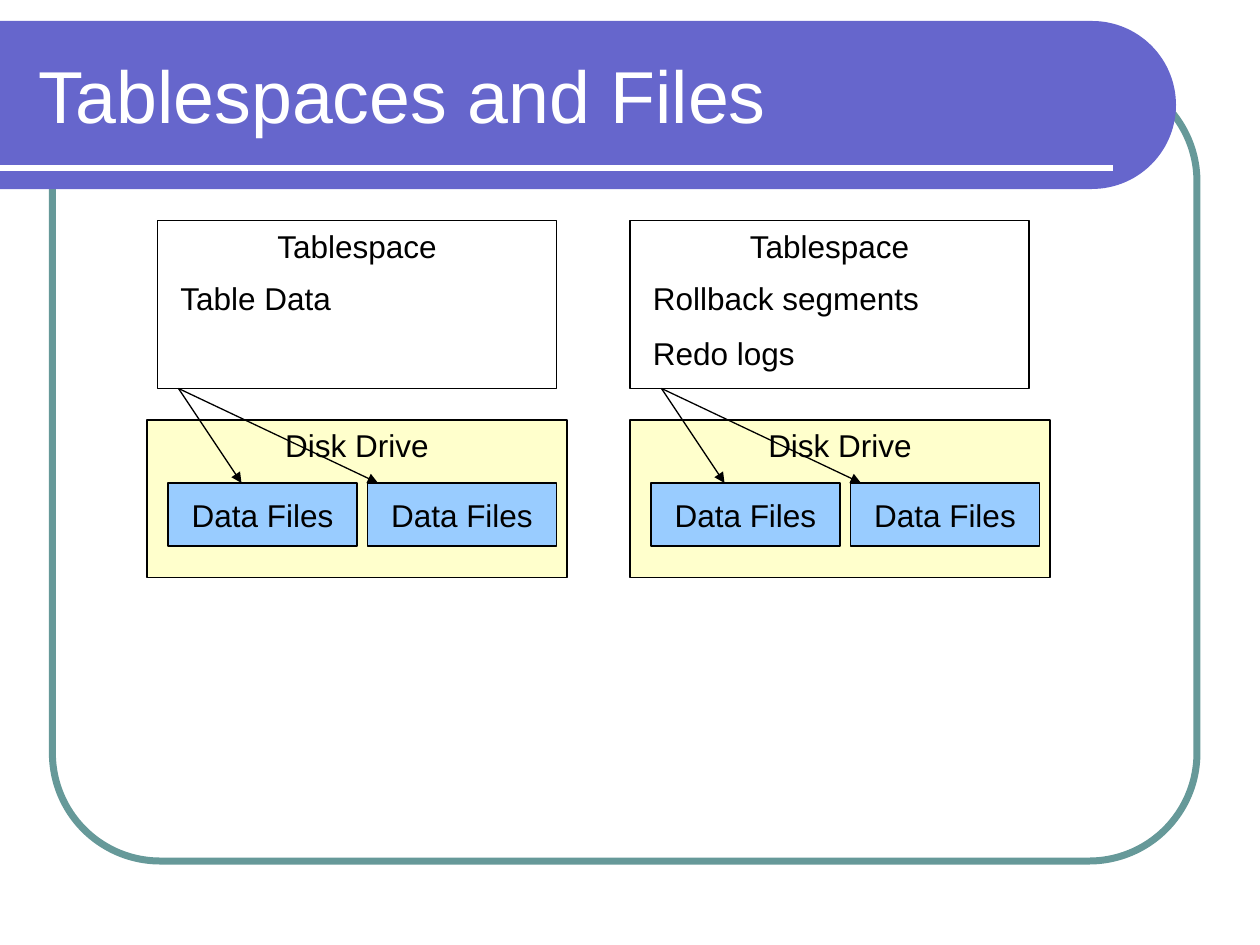
from dataclasses import dataclass
from math import cos, pi, sin

from lxml.etree import SubElement
from pptx import Presentation
from pptx.dml.color import RGBColor as RGB
from pptx.enum.shapes import MSO_CONNECTOR as Connector, MSO_SHAPE as Shape
from pptx.enum.text import MSO_ANCHOR as Anchor, MSO_AUTO_SIZE as AutoSize, PP_ALIGN as Align
from pptx.oxml.ns import qn
from pptx.util import Pt


@dataclass(frozen=True)
class Theme:
    font: str = "Arial"
    title_size: int = 42
    body_size: int = 18
    white: RGB = RGB(0xFF, 0xFF, 0xFF)
    ink: RGB = RGB(0, 0, 0)
    band: RGB = RGB(0x66, 0x66, 0xCC)
    frame: RGB = RGB(0x66, 0x99, 0x99)
    disk: RGB = RGB(0xFF, 0xFF, 0xCC)
    file: RGB = RGB(0x99, 0xCC, 0xFF)
    thin: float = 0.75


class SlideBuilder:
    """Draws styled elements on one slide; every length is in points."""

    def __init__(self, slide, theme):
        self.slide, self.theme = slide, theme
        self.shapes = slide.shapes

    def paint(self, sp, fill=None, line=None, width=0):
        sp.shadow.inherit = False
        for part, color in ((sp.fill, fill), (sp.line.fill, line)):
            if color is None:
                part.background()
            else:
                part.solid()
                part.fore_color.rgb = color
        if line is not None:
            sp.line.width = Pt(width)

    def add_text(self, tf, lines, size, color, align=Align.LEFT, anchor=Anchor.TOP, gap=0):
        tf.word_wrap = True
        tf.vertical_anchor = anchor
        for i, line in enumerate(lines):
            p = tf.add_paragraph() if i else tf.paragraphs[0]
            p.alignment = align
            if i:
                p.space_before = Pt(gap)
            r = p.add_run()
            r.text = line
            r.font.name, r.font.size = self.theme.font, Pt(size)
            r.font.color.rgb = color

    def title(self, text, x, y, w, h):
        sp = self.shapes.title
        sp.left, sp.top, sp.width, sp.height = map(Pt, (x, y, w, h))
        sp.text_frame.auto_size = AutoSize.NONE
        self.add_text(sp.text_frame, [text], self.theme.title_size, self.theme.white,
                      anchor=Anchor.MIDDLE)
        sp.element.getparent().append(sp.element)  # bring in front of the band

    def frame(self, x, y, w, h):
        sp = self.shapes.add_shape(Shape.ROUNDED_RECTANGLE, *map(Pt, (x, y, w, h)))
        sp.adjustments[0] = 0.137
        self.paint(sp, line=self.theme.frame, width=4)

    def band(self, y, w, h, steps=60):
        """Bar from the left slide edge with a half-round right end."""
        radius = h / 2
        arc = [(w - radius + radius * cos(a), y + radius + radius * sin(a))
               for a in (pi * (i / steps - 0.5) for i in range(steps + 1))]
        outline = self.shapes.build_freeform(0, Pt(y))
        outline.add_line_segments([(Pt(px), Pt(py)) for px, py in arc + [(0, y + h)]])
        self.paint(outline.convert_to_shape(), fill=self.theme.band)

    def box(self, text, x, y, w, h, fill=None, anchor=Anchor.TOP):
        sp = self.shapes.add_shape(Shape.RECTANGLE, *map(Pt, (x, y, w, h)))
        self.paint(sp, fill, self.theme.ink, self.theme.thin)
        self.add_text(sp.text_frame, [text], self.theme.body_size, self.theme.ink,
                      Align.CENTER, anchor)

    def label(self, lines, x, y, w, h):
        sp = self.shapes.add_textbox(*map(Pt, (x, y, w, h)))
        self.add_text(sp.text_frame, lines, self.theme.body_size, self.theme.ink, gap=10)

    def line(self, x1, y1, x2, y2, color, width, arrow=False):
        cxn = self.shapes.add_connector(Connector.STRAIGHT, *map(Pt, (x1, y1, x2, y2)))
        cxn.line.color.rgb = color
        cxn.line.width = Pt(width)
        props = cxn.element.spPr
        if arrow:
            SubElement(props.find(qn("a:ln")), qn("a:tailEnd"), type="triangle")
        SubElement(props, qn("a:effectLst"))


def main():
    prs = Presentation()
    prs.slide_width, prs.slide_height = Pt(720), Pt(540)
    theme = Theme()
    s = SlideBuilder(prs.slides.add_slide(prs.slide_layouts[5]), theme)

    s.frame(30, 42, 654, 450)
    s.band(12, 672, 96)
    s.line(0, 96, 636, 96, theme.white, 3)
    s.title("Tablespaces and Files", 15, 18, 631.5, 72)

    # disk left, tablespace left, contents, contents width and height
    groups = [
        (84, 90, ["Table Data"], 114, 29),
        (360, 360, ["Rollback segments", "Redo logs"], 180, 61),
    ]
    file_y, file_w, file_pitch = 276, 108, 114
    space_y, space_h = 126, 96

    for disk_x, *_ in groups:
        s.box("Disk Drive", disk_x, 240, 240, 90, theme.disk)
        for i in range(2):
            s.box("Data Files", disk_x + 12 + i * file_pitch, file_y, file_w, 36,
                  theme.file, Anchor.MIDDLE)
    for _, space_x, contents, w, h in groups:
        s.box("Tablespace", space_x, space_y, 228, space_h)
        s.label(contents, space_x + 6, 156, w, h)
    for disk_x, *_ in groups:
        for tip in (54, 132):
            s.line(disk_x + 18, space_y + space_h, disk_x + tip, file_y,
                   theme.ink, theme.thin, arrow=True)

    prs.save("out.pptx")


if __name__ == "__main__":
    main()
